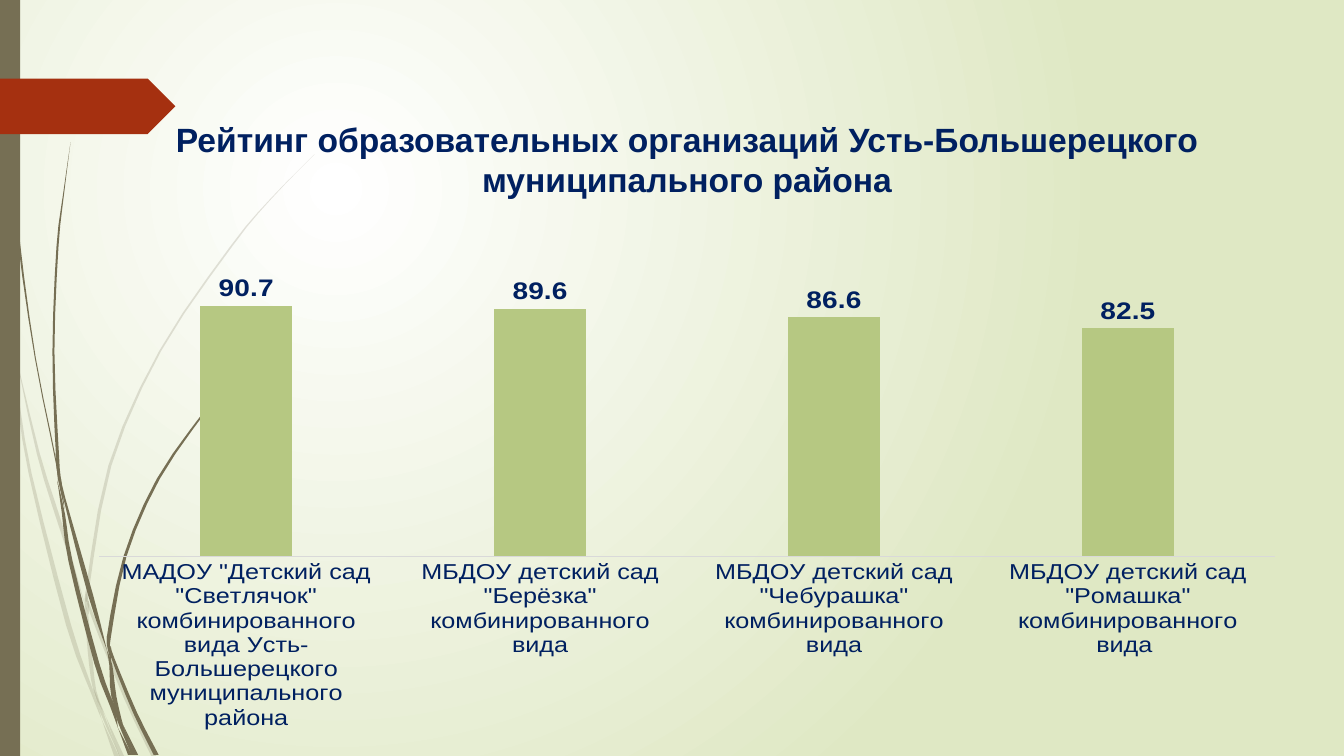
from lxml import etree
from pptx import Presentation
from pptx.chart.data import CategoryChartData
from pptx.dml.color import RGBColor
from pptx.enum import chart as ch, shapes, text
from pptx.oxml import parse_xml
from pptx.oxml.ns import nsdecls, qn
from pptx.util import Inches, Pt

WHITE = RGBColor(0xFF, 0xFF, 0xFF)
PALE_GREEN = RGBColor(0xDF, 0xE8, 0xC4)
BROWN = RGBColor(0x76, 0x6F, 0x54)
RED = RGBColor(0xA5, 0x30, 0x10)
NAVY = RGBColor(0x00, 0x20, 0x60)
GREEN = RGBColor(0xB6, 0xC8, 0x82)
GREY = RGBColor(0xD9, 0xD9, 0xD9)
FONT = "Arial"

FAINT_BLADES = [
    [(0, 2.82, 0), (.05, 3.14, .03), (.11, 3.5, 0)],
    [(.14, 3.45, 0), (.38, 4.5, .03), (.6, 5.21, .04), (.84, 5.99, 0)],
    [(.88, 5.96, 0), (.91, 6.09, .03), (1.25, 6.93, .04), (1.53, 7.51, .05)],
    [(1.05, 7.11, 0), (1.21, 7.51, .05)],
    [(.11, 3.5, 0), (.17, 3.9, .02), (.3, 4.7, .03), (.68, 6.2, .05),
     (.92, 6.88, .03), (1.01, 7.14, 0)],
    [(.84, 5.99, 0), (.86, 6.1, .03), (.89, 6.46, .04), (.94, 6.85, .03),
     (1.05, 7.11, 0)],
    [(3.12, 1.53, 0), (2.68, 1.98, .01), (2.29, 2.45, .02), (1.59, 3.48, .02),
     (1.09, 4.62, .03), (.87, 5.84, .03), (.88, 5.96, 0)],
    [(1.01, 7.14, 0), (1.16, 7.51, .05)],
    [(.85, 5.86, 0), (.86, 5.98, .04), (.88, 6.1, 0)],
    [(.93, 6.83, 0), (1.01, 7.07, .03), (1.19, 7.51, 0)],
]
DARK_BLADES = [
    [(.04, 0, .01), (.08, 1.1, .01), (.18, 2.33, .02), (.35, 3.55, .01),
     (.56, 4.6, .01), (.57, 4.81, 0)],
    [(.6, 4.72, 0), (.64, 4.95, .02), (.9, 5.91, .05), (1.06, 6.45, 0)],
    [(1.1, 6.41, 0), (1.12, 6.53, .03), (1.34, 7.07, .04), (1.55, 7.49, .05)],
    [(.57, 4.77, 0), (.63, 5.1, .03), (.7, 5.57, .04), (.96, 6.58, .05),
     (1.11, 7, .04), (1.17, 7.22, 0)],
    [(.7, 1.41, 0), (.63, 1.93, .01), (.57, 2.45, .02), (.53, 3.49, .02),
     (.57, 4.51, .03), (.6, 4.72, 0)],
    [(1.22, 7.19, 0), (1.35, 7.49, .04)],
    [(.55, 4.49, 0), (.59, 4.75, .03), (.64, 5.05, 0)],
    [(2.6, 3.44, 0), (2.31, 3.74, .01), (2.05, 4.06, .02), (1.57, 4.75, .03),
     (1.24, 5.52, .03), (1.08, 6.32, .04), (1.1, 6.41, 0)],
    [(1.17, 7.22, 0), (1.29, 7.49, .04)],
    [(1.06, 6.45, 0), (1.1, 6.6, .03), (1.13, 6.91, .05), (1.22, 7.19, 0)],
    [(1.06, 6.31, 0), (1.08, 6.42, .03), (1.1, 6.56, 0)],
    [(1.1, 6.91, 0), (1.18, 7.14, .04), (1.32, 7.49, .03)],
]
RATINGS = [
    ('МАДОУ "Детский сад "Светлячок" комбинированного вида '
     'Усть-Большерецкого муниципального района', 90.7),
    ('МБДОУ детский сад "Берёзка" комбинированного вида', 89.6),
    ('МБДОУ детский сад "Чебурашка" комбинированного вида', 86.6),
    ('МБДОУ детский сад "Ромашка" комбинированного вида ', 82.5),
]


def paint(sp, color, alpha=None):
    sp.shadow.inherit = False
    sp.fill.solid()
    sp.fill.fore_color.rgb = color
    sp.line.fill.background()
    if alpha:
        clr = sp._element.spPr.find(qn("a:solidFill"))[0]
        etree.SubElement(clr, qn("a:alpha")).set("val", str(alpha * 1000))


def style_font(font, size, bold=False):
    font.name = FONT
    font.size = Pt(size)
    font.bold = bold
    font.color.rgb = NAVY


def smooth(points, steps=3):
    padded = [points[0], *points, points[-1]]
    curve = []
    for a, b, c, d in zip(padded, padded[1:], padded[2:], padded[3:]):
        for i in range(steps):
            t = i / steps
            curve.append([
                (2 * q + (r - p) * t + (2 * p - 5 * q + 4 * r - v) * t ** 2
                 + (3 * q - p - 3 * r + v) * t ** 3) / 2
                for p, q, r, v in zip(a, b, c, d)])
    return curve + [points[-1]]


def add_background(s):
    fill = s.background.fill
    fill.gradient()
    for stop, color in zip(fill.gradient_stops, (WHITE, PALE_GREEN)):
        stop.color.rgb = color
    grad = s.background._cSld.find(".//" + qn("a:gradFill"))
    grad.replace(grad.find(qn("a:lin")), parse_xml(
        f'<a:path {nsdecls("a")} path="circle"><a:fillToRect l="50000" '
        't="50000" r="100000" b="100000"/></a:path>'))


def add_blade(s, points, alpha=None):
    curve = smooth(points)
    edge = [(x - w / 2, y) for x, y, w in curve]
    edge += [(x + w / 2, y) for x, y, w in reversed(curve)]
    edge = [(Inches(x), Inches(y)) for x, y in edge]
    fb = s.shapes.build_freeform(*edge[0])
    fb.add_line_segments(edge[1:], close=True)
    paint(fb.convert_to_shape(), BROWN, alpha)


def add_side_decor(s, x, y, w, h):
    for blades, alpha in ((FAINT_BLADES, 20), (DARK_BLADES, None)):
        for points in blades:
            add_blade(s, [(x + px, y + py, pw) for px, py, pw in points], alpha)
    bar = s.shapes.add_shape(shapes.MSO_SHAPE.RECTANGLE,
                             Inches(x), Inches(y), Inches(w), Inches(h))
    paint(bar, BROWN)
    tag = s.shapes.add_shape(shapes.MSO_SHAPE.PENTAGON, Inches(x),
                             Inches(y + .78), Inches(1.74), Inches(.55))
    paint(tag, RED)


def add_title(s, x, y, w, h):
    tf = s.shapes.add_textbox(Inches(x), Inches(y), Inches(w), Inches(h)).text_frame
    tf.word_wrap = True
    p = tf.paragraphs[0]
    p.text = "Рейтинг образовательных организаций Усть-Большерецкого муниципального района"
    p.alignment = text.PP_ALIGN.CENTER
    style_font(p.runs[0].font, 24, True)


def add_rating_chart(s, x, y, w, h):
    data = CategoryChartData()
    data.categories = [name for name, _ in RATINGS]
    data.add_series("Series 1", [value for _, value in RATINGS])
    chart = s.shapes.add_chart(ch.XL_CHART_TYPE.COLUMN_CLUSTERED, Inches(x),
                               Inches(y), Inches(w), Inches(h), data).chart
    chart.has_legend = chart.has_title = False
    style_font(chart.font, 18)

    plot = chart.plots[0]
    plot.vary_by_categories = False
    plot.gap_width = 219
    plot.overlap = -27
    fill = plot.series[0].format.fill
    fill.solid()
    fill.fore_color.rgb = GREEN
    plot.has_data_labels = True
    labels = plot.data_labels
    labels.show_value = True
    labels.position = ch.XL_LABEL_POSITION.OUTSIDE_END
    style_font(labels.font, 20, True)

    axis = chart.category_axis
    axis.major_tick_mark = ch.XL_TICK_MARK.NONE
    axis.format.line.color.rgb = GREY
    axis.format.line.width = Pt(.75)
    style_font(axis.tick_labels.font, 18)
    scale = chart.value_axis
    scale.minimum_scale, scale.maximum_scale = 0, 100
    scale.has_major_gridlines = False
    scale.visible = False

    area = chart._chartSpace.chart.plotArea
    for old in area.findall(qn("c:layout")):
        area.remove(old)
    settings = [("layoutTarget", "inner"), ("xMode", "edge"), ("yMode", "edge"),
                ("x", .013), ("y", .073), ("w", .974), ("h", .672)]
    body = "".join(f'<c:{tag} val="{val}"/>' for tag, val in settings)
    area.insert(0, parse_xml(f'<c:layout {nsdecls("c")}><c:manualLayout>{body}'
                             '</c:manualLayout></c:layout>'))


def main():
    prs = Presentation()
    prs.slide_width, prs.slide_height = Inches(13.33), Inches(7.5)
    s = prs.slides.add_slide(prs.slide_layouts[6])
    add_background(s)
    add_side_decor(s, 0, 0, .2, 7.5)
    add_title(s, .3, 1.13, 13.03, 1.18)
    add_rating_chart(s, .83, 2.48, 11.97, 4.76)
    prs.save("out.pptx")


if __name__ == "__main__":
    main()
